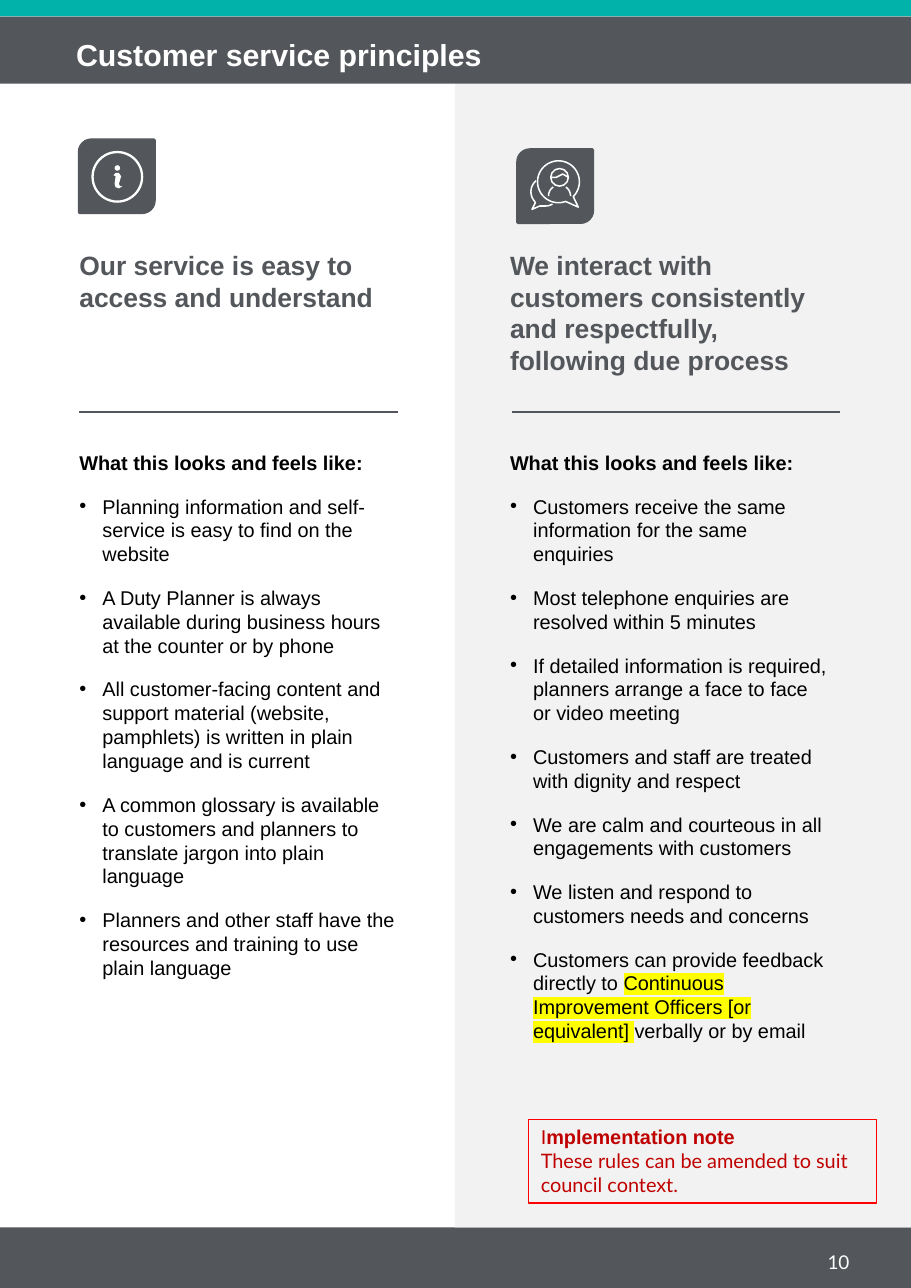
from math import cos, radians, sin

from lxml import etree
from pptx import Presentation
from pptx.dml.color import RGBColor
from pptx.enum.shapes import MSO_CONNECTOR, MSO_SHAPE
from pptx.enum.text import MSO_ANCHOR, MSO_AUTO_SIZE, PP_ALIGN
from pptx.oxml.ns import qn
from pptx.util import Inches, Pt

TITLE = "Customer service principles"
PAGE_NUMBER = "10"
SUBHEADING = "What this looks and feels like:"
COLUMNS = [
    {
        "left": 0.72, "rule": (0.72, 3.61), "tile": (0.72, 1.27),
        "heading": "Our service is easy to access and understand",
        "points": [
            ["Planning information and self-service is easy to find on the website"],
            ["A Duty Planner is always available during business hours at the counter or by phone"],
            ["All customer-facing content and support material (website, pamphlets) "
             "is written in plain language and is current"],
            ["A common glossary is available to customers and planners to translate "
             "jargon into plain language"],
            ["Planners and other staff have the resources and training to use plain language"],
        ],
    },
    {
        "left": 4.63, "rule": (4.65, 7.63), "tile": (4.7, 1.36),
        "heading": "We interact with customers consistently and respectfully, following due process",
        "points": [
            ["Customers receive the same information for the same enquiries"],
            ["Most telephone enquiries are resolved within 5 minutes"],
            ["If detailed information is required, planners arrange a face to face or video meeting"],
            ["Customers and staff are treated with dignity and respect"],
            ["We are calm and courteous in all engagements with customers"],
            ["We listen and respond to customers needs and concerns"],
            ["Customers can provide feedback directly to ",
             "Continuous Improvement Officers [or equivalent] ",
             "verbally or by email"],
        ],
    },
]
NOTE_TITLE = ("I", "mplementation note")
NOTE_TEXT = "These rules can be amended to suit council context."

GREY = RGBColor(0x53, 0x56, 0x5A)
TEAL = RGBColor(0x00, 0xB2, 0xA9)
PALE = RGBColor(0xF2, 0xF2, 0xF2)
WHITE = RGBColor(0xFF, 0xFF, 0xFF)
BLACK = RGBColor(0x00, 0x00, 0x00)
RED = RGBColor(0xFF, 0x00, 0x00)
DARK_RED = RGBColor(0xC0, 0x00, 0x00)
YELLOW = RGBColor(0xFF, 0xFF, 0x00)
RECTANGLE, OVAL = MSO_SHAPE.RECTANGLE, MSO_SHAPE.OVAL
TILE = MSO_SHAPE.ROUND_2_DIAG_RECTANGLE
STRAIGHT = MSO_CONNECTOR.STRAIGHT
LEFT, RIGHT = PP_ALIGN.LEFT, PP_ALIGN.RIGHT
TOP, MIDDLE = MSO_ANCHOR.TOP, MSO_ANCHOR.MIDDLE
NO_AUTOFIT = MSO_AUTO_SIZE.NONE
WIDTH, HEIGHT = 8.27, 11.69
BODY_SIZE = 13
INDENT = 0.21

presentation = Presentation()
presentation.slide_width = Inches(WIDTH)
presentation.slide_height = Inches(HEIGHT)
slide = presentation.slides.add_slide(presentation.slide_layouts[5])
shapes = slide.shapes


def style(shape, fill=None, line=None, weight=1):
    shape.shadow.inherit = False
    if fill is None:
        shape.fill.background()
    else:
        shape.fill.solid()
        shape.fill.fore_color.rgb = fill
    if line is None:
        shape.line.fill.background()
    else:
        shape.line.color.rgb = line
        shape.line.width = Pt(weight)
    return shape


def add_shape(kind, left, top, width, height, **look):
    shape = shapes.add_shape(kind, Inches(left), Inches(top), Inches(width), Inches(height))
    return style(shape, **look)


def add_outline(points, close=False, **look):
    corners = [(Inches(x), Inches(y)) for x, y in points]
    builder = shapes.build_freeform(*corners[0], scale=1.0)
    builder.add_line_segments(corners[1:], close=close)
    return style(builder.convert_to_shape(), **look)


def arc(center_x, center_y, radius, start, end, step=5):
    return [(center_x + radius * cos(radians(angle)), center_y + radius * sin(radians(angle)))
            for angle in range(start, end + 1, step)]


def set_frame(shape, side=0, anchor=TOP):
    frame = shape.text_frame
    values = {"margin_left": Inches(side), "margin_right": Inches(side),
              "margin_top": Inches(0.05), "margin_bottom": Inches(0.05),
              "word_wrap": True, "auto_size": NO_AUTOFIT, "vertical_anchor": anchor}
    for name, value in values.items():
        setattr(frame, name, value)
    return frame


def add_textbox(left, top, width, height, side=0):
    box = shapes.add_textbox(Inches(left), Inches(top), Inches(width), Inches(height))
    return set_frame(box, side)


def add_run(paragraph, text, size, color, bold=False, font="Arial", highlight=None):
    run = paragraph.add_run()
    run.text = text
    for name, value in {"size": Pt(size), "bold": bold, "name": font}.items():
        setattr(run.font, name, value)
    run.font.color.rgb = color
    if highlight is not None:
        mark = etree.Element(qn("a:highlight"))
        etree.SubElement(mark, qn("a:srgbClr"), val=str(highlight))
        run.font._element.find(qn("a:latin")).addprevious(mark)


def add_bullet(frame, parts):
    paragraph = frame.add_paragraph()
    properties = paragraph._p.get_or_add_pPr()
    properties.set("marL", str(Inches(INDENT)))
    properties.set("indent", str(-Inches(INDENT)))
    etree.SubElement(properties, qn("a:buFont"), typeface="Arial")
    etree.SubElement(properties, qn("a:buChar"), char="•")
    paragraph.space_before = Pt(12.9)
    for index, text in enumerate(parts):
        add_run(paragraph, text, BODY_SIZE, BLACK, highlight=YELLOW if index == 1 else None)


def add_column(left, rule, tile, heading, points):
    frame = add_textbox(left, 2.21, 2.89, 1.26)
    add_run(frame.paragraphs[0], heading, 17.3, GREY, bold=True)
    frame = add_textbox(left, 4.04, 2.89, 5.53)
    add_run(frame.paragraphs[0], SUBHEADING, BODY_SIZE, BLACK, bold=True)
    for parts in points:
        add_bullet(frame, parts)
    start, end = rule
    line = shapes.add_connector(STRAIGHT, Inches(start), Inches(3.74), Inches(end), Inches(3.74))
    line.line.color.rgb = GREY
    line.line.width = Pt(0.75)
    etree.SubElement(line._element.spPr, qn("a:effectLst"))
    add_shape(TILE, *tile, 0.68, 0.66, fill=GREY, line=GREY, weight=2)


add_shape(RECTANGLE, 0, 11.14, WIDTH, 0.55, fill=GREY)
add_shape(RECTANGLE, 0, 0, WIDTH, 0.15, fill=TEAL)
add_shape(RECTANGLE, 4.13, 0.5, 4.14, 10.64, fill=PALE)
add_shape(RECTANGLE, 0, 0.15, WIDTH, 0.61, fill=GREY)

title = shapes.title
title.left, title.top, title.width, title.height = map(Inches, (0.69, 0.34, 6.9, 0.36))
title_paragraph = set_frame(title, anchor=MIDDLE).paragraphs[0]
title_paragraph.alignment = LEFT
title_paragraph.line_spacing = 0.8
add_run(title_paragraph, TITLE, 19.8, WHITE, bold=True)
shapes._spTree.append(title._element)

number_paragraph = add_textbox(7.19, 11.3, 0.62, 0.31, side=0.1).paragraphs[0]
number_paragraph.alignment = RIGHT
add_run(number_paragraph, PAGE_NUMBER, 12.4, WHITE, font="Lato")

for column in COLUMNS:
    add_column(**column)

add_shape(OVAL, 0.84, 1.38, 0.45, 0.45, line=WHITE, weight=1.5)
add_shape(OVAL, 1.04, 1.5, 0.05, 0.05, fill=WHITE)
letter_stem = [(1.03, 1.59), (1.05, 1.57), (1.08, 1.57), (1.1, 1.6), (1.08, 1.67),
               (1.09, 1.69), (1.11, 1.69), (1.08, 1.71), (1.05, 1.7), (1.04, 1.67),
               (1.05, 1.6)]
add_outline(letter_stem, close=True, fill=WHITE)

front_bubble = arc(5.07, 1.65, 0.19, 70, 405) + [(5.25, 1.88)]
back_bubble = (arc(4.95, 1.74, 0.13, 60, 90) + [(4.9, 1.87), (4.83, 1.9), (4.86, 1.84)]
               + arc(4.95, 1.74, 0.13, 140, 230))
fringe = [(5, 1.61), (5.05, 1.61), (5.11, 1.58), (5.16, 1.61)]
add_outline(front_bubble, close=True, line=WHITE)
for strokes in (back_bubble, fringe, arc(5.08, 1.78, 0.1, 180, 235), arc(5.08, 1.78, 0.1, 305, 360)):
    add_outline(strokes, line=WHITE)
add_shape(OVAL, 5, 1.53, 0.16, 0.16, line=WHITE)

note = add_shape(RECTANGLE, 4.8, 10.16, 3.16, 0.76, line=RED, weight=0.75)
note_frame = set_frame(note, side=0.11)
note_heading = note_frame.paragraphs[0]
for text, bold in zip(NOTE_TITLE, (False, True)):
    add_run(note_heading, text, BODY_SIZE, DARK_RED, bold=bold)
note_body = note_frame.add_paragraph()
add_run(note_body, NOTE_TEXT, BODY_SIZE, DARK_RED, font="Lato")
for paragraph in note_frame.paragraphs:
    paragraph.alignment = LEFT

presentation.save("out.pptx")
